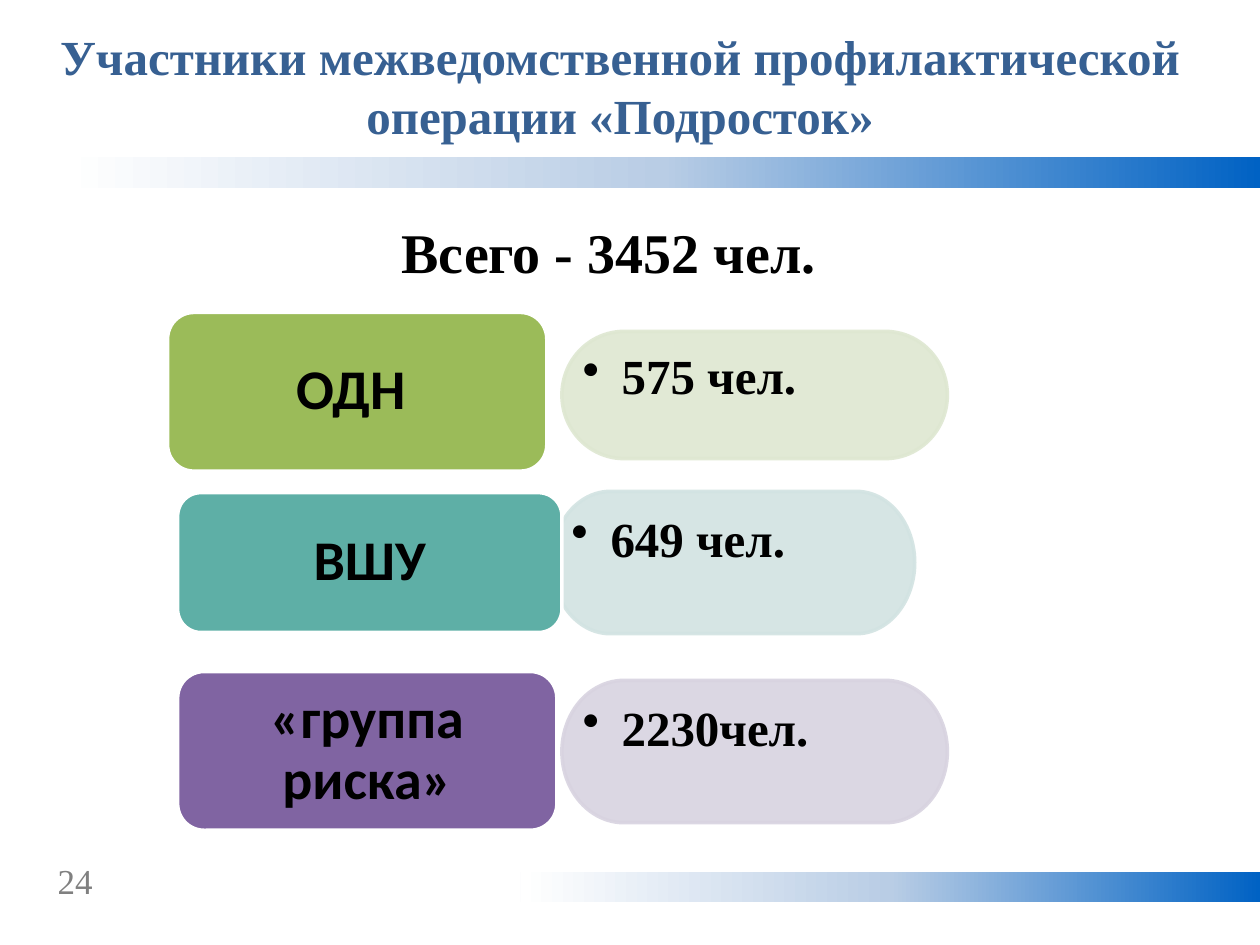
from copy import deepcopy
from pptx import Presentation
from pptx.dml.color import RGBColor
from pptx.enum.shapes import MSO_SHAPE as Shape
from pptx.enum.text import MSO_ANCHOR as Anchor, MSO_AUTO_SIZE as Fit, PP_ALIGN as Align
from pptx.oxml.ns import qn
from pptx.util import Inches, Pt
from lxml.etree import SubElement as Sub

BLACK = RGBColor(0, 0, 0)
WHITE = RGBColor(255, 255, 255)
GREY = RGBColor(0x80, 0x80, 0x80)
NAVY = RGBColor(0x37, 0x60, 0x92)
BLUE = RGBColor(0x00, 0x62, 0xC4)
SKY = RGBColor(0xB9, 0xCD, 0xE5)
GREEN = RGBColor(0x9B, 0xBB, 0x59)
LIME = RGBColor(0xDE, 0xE7, 0xD1)
TEAL = RGBColor(0x5E, 0xAF, 0xA6)
MINT = RGBColor(0xD2, 0xE3, 0xE2)
PLUM = RGBColor(0x80, 0x64, 0xA2)
LILAC = RGBColor(0xD8, 0xD3, 0xE0)
SERIF = "Times New Roman"

deck = Presentation()
deck.slide_width, deck.slide_height = Inches(10), Inches(7.5)
COL, ROW = deck.slide_width / 100, deck.slide_height / 75
slide = deck.slides.add_slide(deck.slide_layouts[1])
shapes = slide.shapes


def grid(left, top, wide, high):
    return [int(n * unit) for n, unit in zip((left, top, wide, high), (COL, ROW) * 2)]


def write(shape, text, size, font, color, bold=True, align=Align.CENTER, anchor=Anchor.MIDDLE):
    frame = shape.text_frame
    frame.word_wrap = True
    frame.auto_size = Fit.NONE
    frame.vertical_anchor = anchor
    para = frame.paragraphs[0]
    para.alignment = align
    run = para.add_run()
    run.text = text
    run.font.size, run.font.name, run.font.bold = Pt(size), font, bold
    run.font.color.rgb = color
    return para


for left, top in ((5.1, 12.5), (41.3, 69.2)):
    bar = shapes.add_shape(Shape.RECTANGLE, *grid(left, top, 100 - left, 2.4))
    bar.shadow.inherit = False
    bar.line.fill.background()
    bar.fill.gradient()
    bar.fill.gradient_angle = 180
    stops = bar.element.spPr.find(qn("a:gradFill")).find(qn("a:gsLst"))
    stops.insert(1, deepcopy(stops[0]))
    for stop, spot, color in zip(bar.fill.gradient_stops, (0, 0.5, 1), (BLUE, SKY, WHITE)):
        stop.position = spot
        stop.color.rgb = color

page = shapes.add_textbox(*grid(3.6, 67.7, 5, 4.4))
write(page, "24", 20, SERIF, GREY, False, Align.LEFT, Anchor.TOP)

title = shapes.title
title.left, title.top, title.width, title.height = grid(0, 1.6, 98.4, 10.4)
write(title, "Участники межведомственной профилактической операции «Подросток»", 28, SERIF, NAVY)

total = slide.placeholders[1]
total.left, total.top, total.width, total.height = grid(4.7, 15.6, 87.2, 8.6)
para = write(total, "Всего - 3452 чел.", 32, SERIF, BLACK)
para.space_before = Pt(6.4)
props = para._p.get_or_add_pPr()
props.set("marL", str(Inches(0.38)))
props.set("indent", str(Inches(-0.38)))
Sub(props, qn("a:buNone"))

groups = (
    ("ОДН ", "575 чел.", GREEN, LIME, (13.3, 24.8, 30.1, 12.6), (44.6, 26.3, 30.6, 10.1)),
    ("ВШУ", "649 чел.", TEAL, MINT, (14.1, 39.1, 30.5, 11.1), (43.8, 39, 28.8, 11.3)),
    ("«группа риска»", "2230чел.", PLUM, LILAC, (14.1, 53.3, 30.1, 12.6), (44.6, 54, 30.6, 11.3)),
)
for name, count, dark, pale, box, oval in groups:
    pill = shapes.add_shape(Shape.FLOWCHART_TERMINATOR, *grid(*oval))
    card = shapes.add_shape(Shape.ROUNDED_RECTANGLE, *grid(*box))
    for shape, fill, edge, across, down in ((pill, pale, pale, 0.02, 0.02), (card, dark, WHITE, 0.13, 0.07)):
        shape.shadow.inherit = False
        shape.fill.solid()
        shape.fill.fore_color.rgb = fill
        shape.line.color.rgb = edge
        shape.line.width = Pt(2)
        frame = shape.text_frame
        frame.margin_left = frame.margin_right = Inches(across)
        frame.margin_top = frame.margin_bottom = Inches(down)
    for tint in pill.element.spPr.iter(qn("a:srgbClr")):
        Sub(tint, qn("a:alpha")).set("val", "90000")
    para = write(pill, count, 28, SERIF, BLACK, align=Align.LEFT, anchor=Anchor.TOP)
    para.line_spacing = 0.9
    props = para._p.get_or_add_pPr()
    props.set("marL", str(Inches(0.31)))
    props.set("indent", str(Inches(-0.31)))
    Sub(props, qn("a:buChar")).set("char", "•")
    write(card, name, 32, "Calibri", BLACK).line_spacing = 0.9

deck.save("out.pptx")
